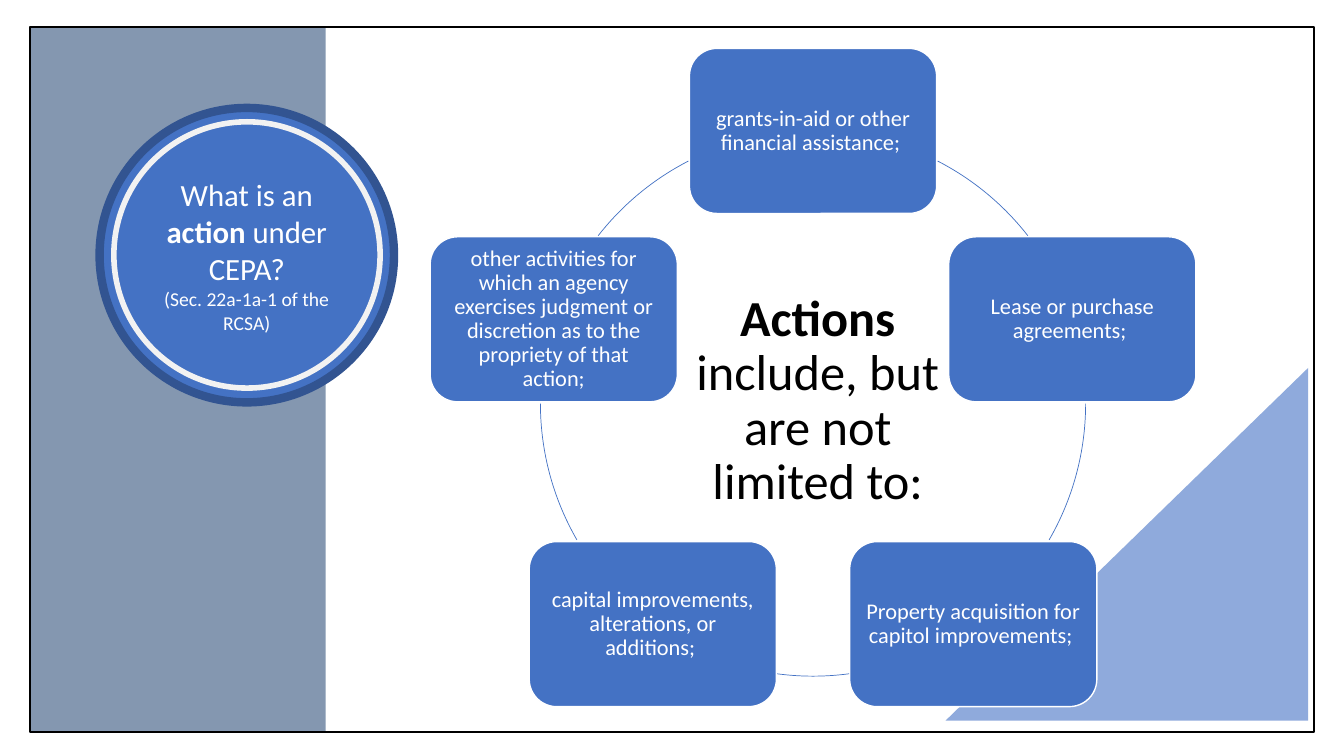
import math
from pptx import Presentation
from pptx import util as u
from pptx.dml.color import RGBColor
from pptx.enum import shapes, text

# Content
COLORS = {"blue": "4472C4", "navy": "325491", "slate": "8497B0", "sky": "8FAADC",
          "white": "FFFFFF", "pale": "F2F2F2", "black": "000000"}
# action, start and end angle of the arc that follows it (clockwise degrees)
ACTIONS = [
    ("grants-in-aid or other financial assistance; ", 297.2, 322),
    ("Lease or purchase agreements; ", 0, 30),
    ("Property acquisition for capitol improvements; ", 82.4, 97.6),
    ("capital improvements, alterations, or additions; ", 150, 180),
    ("other activities for which an agency exercises judgment or discretion "
     "as to the propriety of that action;", 218, 242.8),
]
# paragraphs of (text, size, bold) runs
HEADING = [[("Actions", 36, True), (" include, but are not limited to:", 36, False)]]
QUESTION = [
    [("What is an ", 22, False), ("action", 22, True), (" under CEPA?", 22, False)],
    [("(Sec. 22a-1a-1 of the RCSA)", 14, False)],
]

# Layout in centimetres
RING_X, RING_Y, RING_R = 20.49, 10.17, 6.87
BOX_W, BOX_H = 6.23, 4.16
INSET = u.Cm(0.18)
BOX_FRAME = {"margin_left": INSET, "margin_right": INSET,
             "margin_top": INSET, "margin_bottom": INSET}

deck = Presentation()
deck.slide_width, deck.slide_height = u.Cm(33.87), u.Cm(19.05)
slide = deck.slides.add_slide(deck.slide_layouts[6])


def add_part(kind, place, fill=None, line=None, width=1):
    part = slide.shapes.add_shape(kind, *map(u.Cm, place))
    part.shadow.inherit = False
    if fill:
        part.fill.solid()
        part.fill.fore_color.rgb = RGBColor.from_string(COLORS[fill])
    else:
        part.fill.background()
    if line:
        part.line.color.rgb = RGBColor.from_string(COLORS[line])
        part.line.width = u.Pt(width)
    else:
        part.line.fill.background()
    return part


def write(part, paragraphs, color, spacing=1.0, frame_format=None):
    frame = part.text_frame
    settings = {"word_wrap": True, "vertical_anchor": text.MSO_ANCHOR.MIDDLE}
    for name, value in {**settings, **(frame_format or {})}.items():
        setattr(frame, name, value)
    for i, runs in enumerate(paragraphs):
        paragraph = frame.add_paragraph() if i else frame.paragraphs[0]
        paragraph.alignment = text.PP_ALIGN.CENTER
        paragraph.line_spacing = spacing
        for words, size, bold in runs:
            run = paragraph.add_run()
            run.text = words
            font_format = {"name": "Calibri", "size": u.Pt(size), "bold": bold}
            for name, value in font_format.items():
                setattr(run.font, name, value)
            run.font.color.rgb = RGBColor.from_string(COLORS[color])


# Corner triangle, side band and frame
kinds = shapes.MSO_SHAPE
corner = add_part(kinds.RIGHT_TRIANGLE, (23.83, 9.27, 9.14, 8.89), "sky")
corner.element.spPr.xfrm.set("flipH", "1")
add_part(kinds.RECTANGLE, (0.74, 0.69, 7.47, 17.75), "slate")
add_part(kinds.RECTANGLE, (0.76, 0.69, 32.36, 17.75), line="black", width=1.5)

# Ring of actions, clockwise from the top
ring = (RING_X - RING_R, RING_Y - RING_R, 2 * RING_R, 2 * RING_R)
for i, (action, start, end) in enumerate(ACTIONS):
    angle = math.radians(360 / len(ACTIONS) * i - 90)
    left = RING_X + RING_R * math.cos(angle) - BOX_W / 2
    top = RING_Y + RING_R * math.sin(angle) - BOX_H / 2
    box = add_part(kinds.ROUNDED_RECTANGLE, (left, top, BOX_W, BOX_H), "blue", "white")
    write(box, [[(action, 16, False)]], "white", 0.9, BOX_FRAME)
    arc = add_part(kinds.ARC, ring, line="blue", width=0.5)
    for n, degrees in enumerate((start, end)):
        arc.adjustments[n] = degrees * 0.6  # 60000 units a degree, scaled by 100000

# Heading inside the ring
heading = slide.shapes.add_textbox(*map(u.Cm, (17.27, 7.62, 6.68, 5)))
write(heading, HEADING, "black", 0.9)

# Question badge
badge = add_part(kinds.OVAL, (2.51, 2.72, 7.42, 7.42), "blue", "navy", 6)
write(badge, QUESTION, "white")
add_part(kinds.OVAL, (2.87, 3.07, 6.71, 6.71), line="pale", width=4)

deck.save("out.pptx")
